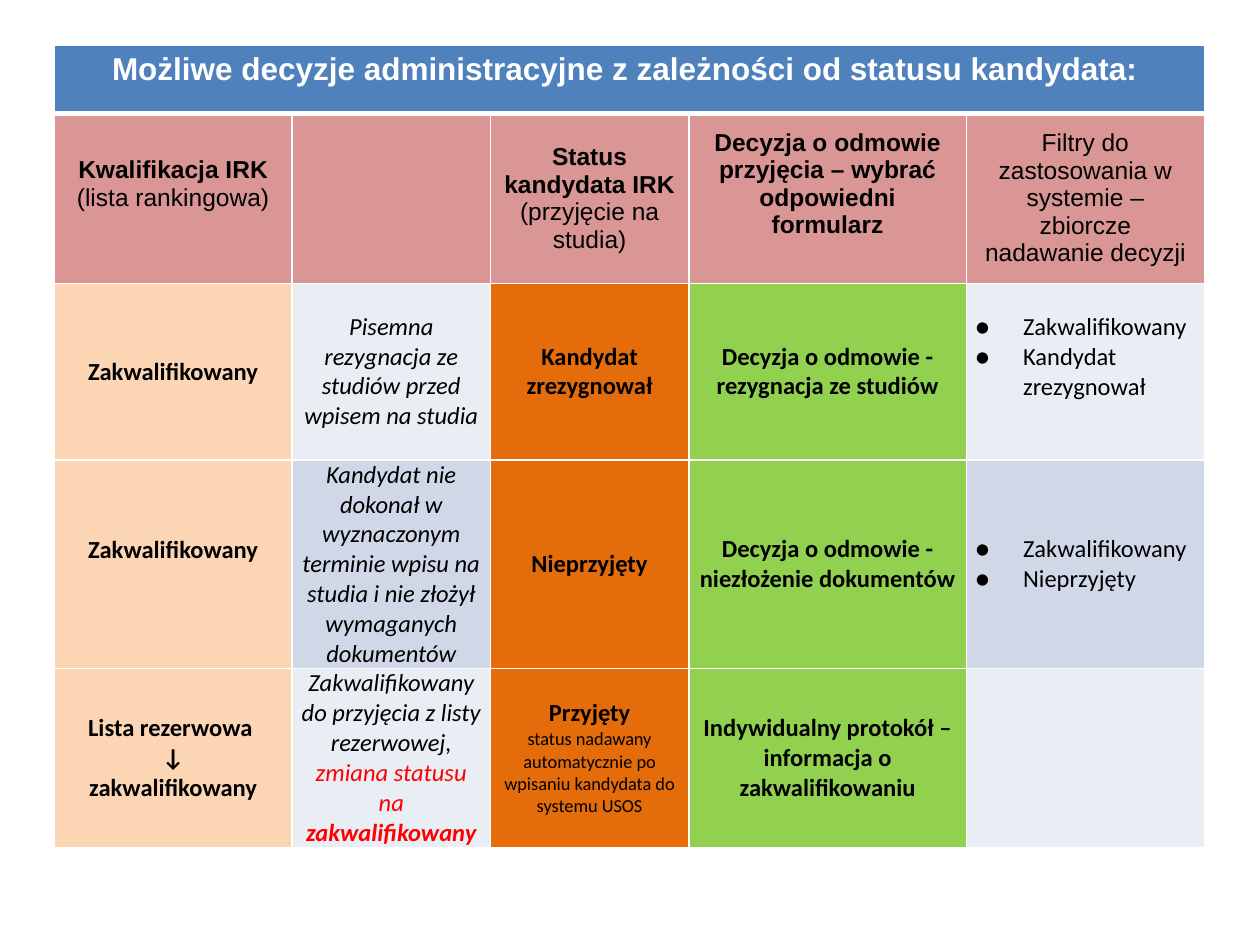
from lxml.etree import SubElement
from pptx import Presentation
from pptx.dml.color import RGBColor
from pptx.enum.text import MSO_ANCHOR as Anchor, PP_ALIGN as Align
from pptx.oxml.ns import qn
from pptx.util import Inches, Pt

WHITE = RGBColor(0xFF, 0xFF, 0xFF)
BLACK = RGBColor(0, 0, 0)
RED = RGBColor(0xFF, 0, 0)
BLUE = RGBColor(0x4F, 0x81, 0xBD)
ROSE = RGBColor(0xD9, 0x96, 0x94)
PEACH = RGBColor(0xFC, 0xD5, 0xB5)
ORANGE = RGBColor(0xE4, 0x6C, 0x0A)
GREEN = RGBColor(0x92, 0xD0, 0x50)
PALE = RGBColor(0xE9, 0xED, 0xF4)
PALE_DARK = RGBColor(0xD0, 0xD8, 0xE8)

COLUMNS = (12, 10, 10, 14, 12)
ROWS = (54, 135, 140, 140, 140)
TABLE_SHARES = (0.043, 0.048, 0.913, 0.812)
RAISED = Inches(0.23)
INDENT = Inches(0.38)
TAB = Inches(0.29)

PLAIN, BOLD, ITALIC = {}, {"bold": True}, {"italic": True}
RED_ITALIC = {"italic": True, "color": RED}
RED_STRONG = {"bold": True, **RED_ITALIC}
SMALL = {"size": 10.5}

TITLE = "Możliwe decyzje administracyjne z zależności od statusu kandydata: "
HEADERS = [
    [[("Kwalifikacja IRK", BOLD)], [("(lista rankingowa)", PLAIN)]],
    [],
    [[("Status kandydata IRK", BOLD)], [("(przyjęcie na studia)", PLAIN)]],
    [[("Decyzja o odmowie przyjęcia – wybrać odpowiedni formularz", BOLD)]],
    [[("Filtry do zastosowania w systemie – zbiorcze nadawanie decyzji", PLAIN)]],
]
BODY = [
    [
        [[("Zakwalifikowany", BOLD)]],
        [[("Pisemna rezygnacja ze studiów przed wpisem na studia", ITALIC)]],
        [[("Kandydat zrezygnował", BOLD)]],
        [[("Decyzja o odmowie - rezygnacja ze studiów", BOLD)]],
        [[("Zakwalifikowany", PLAIN)], [("Kandydat zrezygnował", PLAIN)]],
    ],
    [
        [[("Zakwalifikowany", BOLD)]],
        [[("Kandydat nie dokonał w wyznaczonym terminie wpisu na studia "
           "i nie złożył wymaganych dokumentów", ITALIC)]],
        [[("Nieprzyjęty", BOLD)]],
        [[("Decyzja o odmowie - niezłożenie dokumentów", BOLD)]],
        [[("Zakwalifikowany", PLAIN)], [("Nieprzyjęty", PLAIN)]],
    ],
    [
        [[("Lista rezerwowa ", BOLD)], [("↓", BOLD)], [("zakwalifikowany", BOLD)]],
        [[("Zakwalifikowany do przyjęcia z listy rezerwowej, ", ITALIC),
          ("zmiana statusu na ", RED_ITALIC), ("zakwalifikowany", RED_STRONG)]],
        [[("Przyjęty", BOLD)],
         [("status nadawany automatycznie po wpisaniu kandydata do systemu USOS", SMALL)]],
        [[("Indywidualny protokół – informacja o zakwalifikowaniu", BOLD)]],
        [],
    ],
]
RAISED_HEADERS = {0, 3}
RAISED_BODY = {(0, 4), (1, 0)}


def add_border(cell, side, width):
    """Draw one white cell edge."""
    line = SubElement(cell._tc.get_or_add_tcPr(), qn(f"a:ln{side}"), w=str(Pt(width)))
    fill = SubElement(line, qn("a:solidFill"))
    SubElement(fill, qn("a:srgbClr"), val=str(WHITE))


def style_cell(cell, color, top=1, bottom=1):
    """Give a cell its edges and fill."""
    for side, width in (("L", 1), ("R", 1), ("T", top), ("B", bottom)):
        add_border(cell, side, width)
    cell.fill.solid()
    cell.fill.fore_color.rgb = color


def add_bullet(paragraph):
    """Make a paragraph a bulleted item with a hanging indent."""
    properties = paragraph._p.get_or_add_pPr()
    properties.set("marL", str(INDENT))
    properties.set("indent", str(-INDENT))
    SubElement(properties, qn("a:buFont"), typeface="Calibri")
    SubElement(properties, qn("a:buChar"), char="●")
    tabs = SubElement(properties, qn("a:tabLst"))
    SubElement(tabs, qn("a:tab"), pos=str(TAB), algn="l")


def write_cell(cell, paragraphs, font, bulleted=False):
    """Fill a cell with paragraphs of styled runs."""
    cell.vertical_anchor = Anchor.MIDDLE
    frame = cell.text_frame
    for index, runs in enumerate(paragraphs):
        paragraph = frame.add_paragraph() if index else frame.paragraphs[0]
        if bulleted:
            add_bullet(paragraph)
        else:
            paragraph.alignment = Align.CENTER
        for text, style in runs:
            run = paragraph.add_run()
            run.text = text
            run.font.name = font
            run.font.size = Pt(style.get("size", 14))
            run.font.bold = style.get("bold", False)
            run.font.italic = style.get("italic", False)
            run.font.color.rgb = style.get("color", BLACK)


def fill_title(table):
    """Merge the first row into the title band."""
    for cell in table.rows[0].cells:
        style_cell(cell, BLUE, bottom=3)
    title = table.cell(0, 0)
    title.merge(table.cell(0, len(COLUMNS) - 1))
    write_cell(title, [[(TITLE, {"size": 18, "bold": True, "color": WHITE})]], "Arial")
    title.vertical_anchor = Anchor.TOP


def fill_headers(table):
    """Write the row of column headings."""
    for column, paragraphs in enumerate(HEADERS):
        cell = table.cell(1, column)
        style_cell(cell, ROSE, top=3)
        write_cell(cell, paragraphs, "Arial")
        if column in RAISED_HEADERS:
            cell.margin_bottom = Inches(0.05) + RAISED


def fill_body(table):
    """Write the decision rows with column colours and banded neutrals."""
    for row, contents in enumerate(BODY):
        neutral = PALE_DARK if row % 2 else PALE
        colors = (PEACH, neutral, ORANGE, GREEN, neutral)
        for column, (paragraphs, color) in enumerate(zip(contents, colors)):
            cell = table.cell(row + 2, column)
            style_cell(cell, color)
            cell.margin_left = cell.margin_right = Inches(0.07)
            cell.margin_top = 0
            cell.margin_bottom = RAISED if (row, column) in RAISED_BODY else 0
            write_cell(cell, paragraphs, "Calibri", bulleted=column == 4)


def add_decision_table(slide, left, top, width, height):
    """Place the decision table in the given box."""
    shape = slide.shapes.add_table(len(ROWS), len(COLUMNS), left, top, width, height)
    table = shape.table
    table.first_row = table.horz_banding = False
    for column, weight in zip(table.columns, COLUMNS):
        column.width = int(width * weight / sum(COLUMNS))
    for row, weight in zip(table.rows, ROWS):
        row.height = int(height * weight / sum(ROWS))
    fill_title(table)
    fill_headers(table)
    fill_body(table)


def main():
    """Build and save the presentation."""
    presentation = Presentation()
    presentation.slide_width, presentation.slide_height = Inches(10), Inches(7.5)
    slide = presentation.slides.add_slide(presentation.slide_layouts[6])
    sizes = (presentation.slide_width, presentation.slide_height) * 2
    box = [int(share * size) for share, size in zip(TABLE_SHARES, sizes)]
    add_decision_table(slide, *box)
    presentation.save("out.pptx")


if __name__ == "__main__":
    main()
